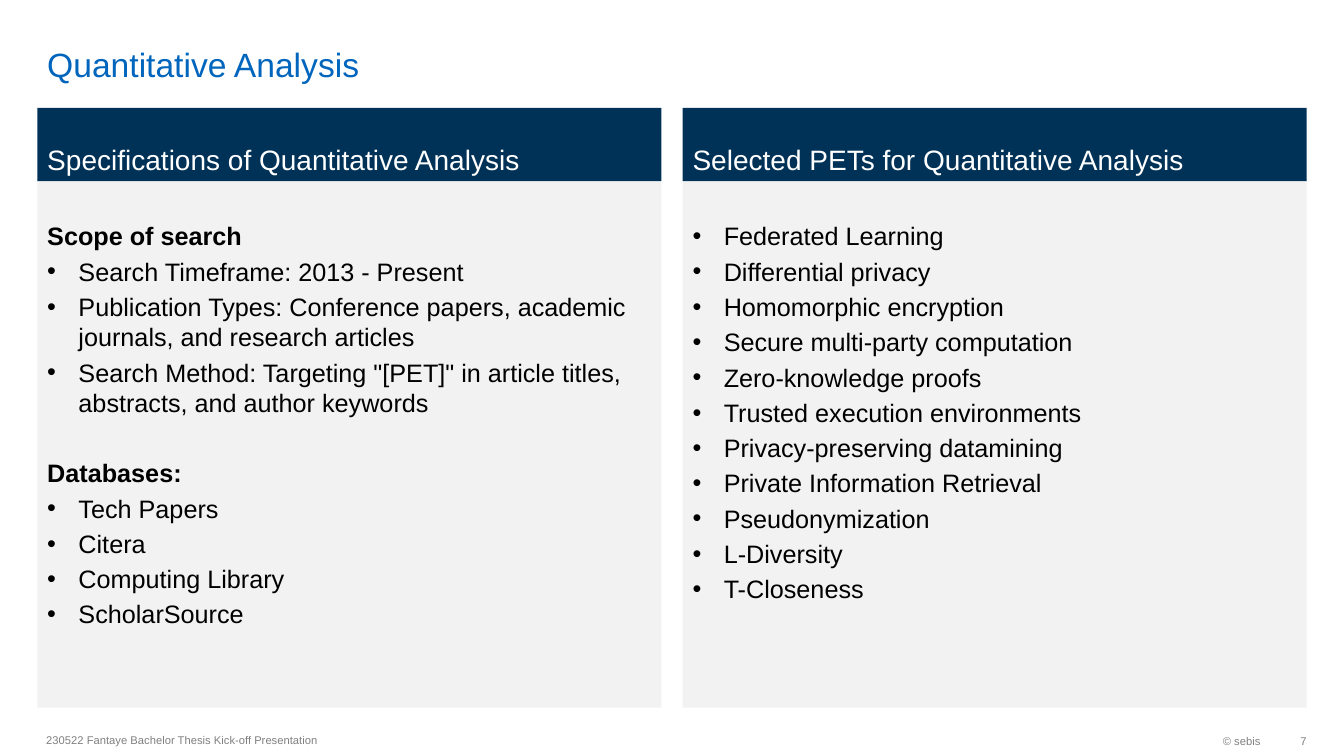
from lxml import etree
from pptx import Presentation
from pptx.dml.color import RGBColor
from pptx.enum.shapes import MSO_SHAPE
from pptx.enum.text import MSO_ANCHOR, PP_ALIGN
from pptx.oxml.ns import qn
from pptx.util import Inches, Pt

RECTANGLE = MSO_SHAPE.RECTANGLE
TOP, MIDDLE, BOTTOM = MSO_ANCHOR.TOP, MSO_ANCHOR.MIDDLE, MSO_ANCHOR.BOTTOM
LEFT, RIGHT = PP_ALIGN.LEFT, PP_ALIGN.RIGHT

NAVY, BLUE, PALE, GREY = "003258", "0065BD", "F2F2F2", "808080"
WHITE, BLACK = "FFFFFF", "000000"

COLUMN_LEFT, COLUMN_STEP, COLUMN_WIDTH = 0.37, 6.4, 6.19
HEADER_TOP, HEADER_HEIGHT = 1.07, 0.73
BODY_TOP, BODY_HEIGHT = 1.8, 5.22

# Each column: header, then groups of (heading, bullets).
COLUMNS = [
    ("Specifications of Quantitative Analysis", [
        ("Scope of search", [
            "Search Timeframe: 2013 - Present",
            "Publication Types: Conference papers, academic journals, "
            "and research articles",
            'Search Method: Targeting "[PET]" in article titles, '
            "abstracts, and author keywords",
        ]),
        ("Databases:", [
            "Tech Papers",
            "Citera",
            "Computing Library",
            "ScholarSource",
        ]),
    ]),
    ("Selected PETs for Quantitative Analysis", [
        (None, [
            "Federated Learning",
            "Differential privacy",
            "Homomorphic encryption",
            "Secure multi-party computation",
            "Zero-knowledge proofs",
            "Trusted execution environments",
            "Privacy-preserving datamining",
            "Private Information Retrieval",
            "Pseudonymization",
            "L-Diversity",
            "T-Closeness",
        ]),
    ]),
]


def color(value):
    return RGBColor.from_string(value)


class SlideBuilder:
    font = "Arial"
    body_size = 18
    line_height = 21.6
    paragraph_gap = 3.6
    group_gap = line_height + 2 * paragraph_gap
    bullet_indent = 0.31

    def __init__(self, page):
        self.page = page

    def set_frame(self, box, anchor, insets=(0.1, 0.05, 0.1, 0.05)):
        frame = box.text_frame
        frame.word_wrap = True
        frame.vertical_anchor = anchor
        (frame.margin_left, frame.margin_top,
         frame.margin_right, frame.margin_bottom) = map(Inches, insets)
        return frame

    def add_span(self, para, text, size, hue, bold=False):
        span = para.add_run()
        span.text = text
        span.font.name = self.font
        span.font.size = Pt(size)
        span.font.bold = bold
        span.font.color.rgb = color(hue)

    def add_bullet(self, para):
        properties = para._p.get_or_add_pPr()
        indent = Inches(self.bullet_indent)
        properties.set("marL", str(indent))
        properties.set("indent", str(-indent))
        etree.SubElement(properties, qn("a:buFont"), typeface=self.font)
        etree.SubElement(properties, qn("a:buChar"), char="•")

    def add_label(self, text, place, size, hue, anchor=MIDDLE, align=LEFT,
                  insets=(0.1, 0.05, 0.1, 0.05)):
        box = self.page.shapes.add_textbox(*map(Inches, place))
        para = self.set_frame(box, anchor, insets).paragraphs[0]
        para.alignment = align
        self.add_span(para, text, size, hue)

    def add_panel(self, place, fill):
        panel = self.page.shapes.add_shape(RECTANGLE, *map(Inches, place))
        panel.shadow.inherit = False
        panel.fill.solid()
        panel.fill.fore_color.rgb = color(fill)
        panel.line.fill.background()
        return panel

    def add_header(self, text, place):
        para = self.set_frame(self.add_panel(place, NAVY), BOTTOM).paragraphs[0]
        para.alignment = LEFT
        self.add_span(para, text, 20, WHITE)

    def add_body(self, groups, place):
        frame = self.set_frame(self.add_panel(place, PALE), TOP,
                               (0.1, 0.39, 0.1, 0.05))
        # Flatten to (text, is_heading) lines.
        lines = []
        for heading, bullets in groups:
            if heading:
                lines.append((heading, True))
            lines += [(bullet, False) for bullet in bullets]
        for number, (text, is_heading) in enumerate(lines):
            para = frame.add_paragraph() if number else frame.paragraphs[0]
            para.alignment = LEFT
            para.line_spacing = Pt(self.line_height)
            if number:
                gap = self.group_gap if is_heading else self.paragraph_gap
                para.space_before = Pt(gap)
            if not is_heading:
                self.add_bullet(para)
            self.add_span(para, text, self.body_size, BLACK, is_heading)


def main():
    deck = Presentation()
    deck.slide_width, deck.slide_height = Inches(13.33), Inches(7.5)
    builder = SlideBuilder(deck.slides.add_slide(deck.slide_layouts[6]))

    for number, (header, groups) in enumerate(COLUMNS):
        left = COLUMN_LEFT + number * COLUMN_STEP
        builder.add_header(header, (left, HEADER_TOP, COLUMN_WIDTH, HEADER_HEIGHT))
        builder.add_body(groups, (left, BODY_TOP, COLUMN_WIDTH, BODY_HEIGHT))

    builder.add_label("Quantitative Analysis", (0.37, 0.05, 11.58, 0.79), 24,
                      BLUE, BOTTOM, insets=(0.1, 0, 0.1, 0))
    builder.add_label("© sebis", (10.26, 7.19, 2.34, 0.32), 8, GREY, align=RIGHT)
    builder.add_label("7", (12.6, 7.19, 0.36, 0.32), 8, GREY, align=RIGHT,
                      insets=(0.1, 0.05, 0, 0.05))
    builder.add_label("230522 Fantaye Bachelor Thesis Kick-off Presentation",
                      (0.36, 7.18, 6.3, 0.32), 8, GREY)
    deck.save("out.pptx")


if __name__ == "__main__":
    main()
